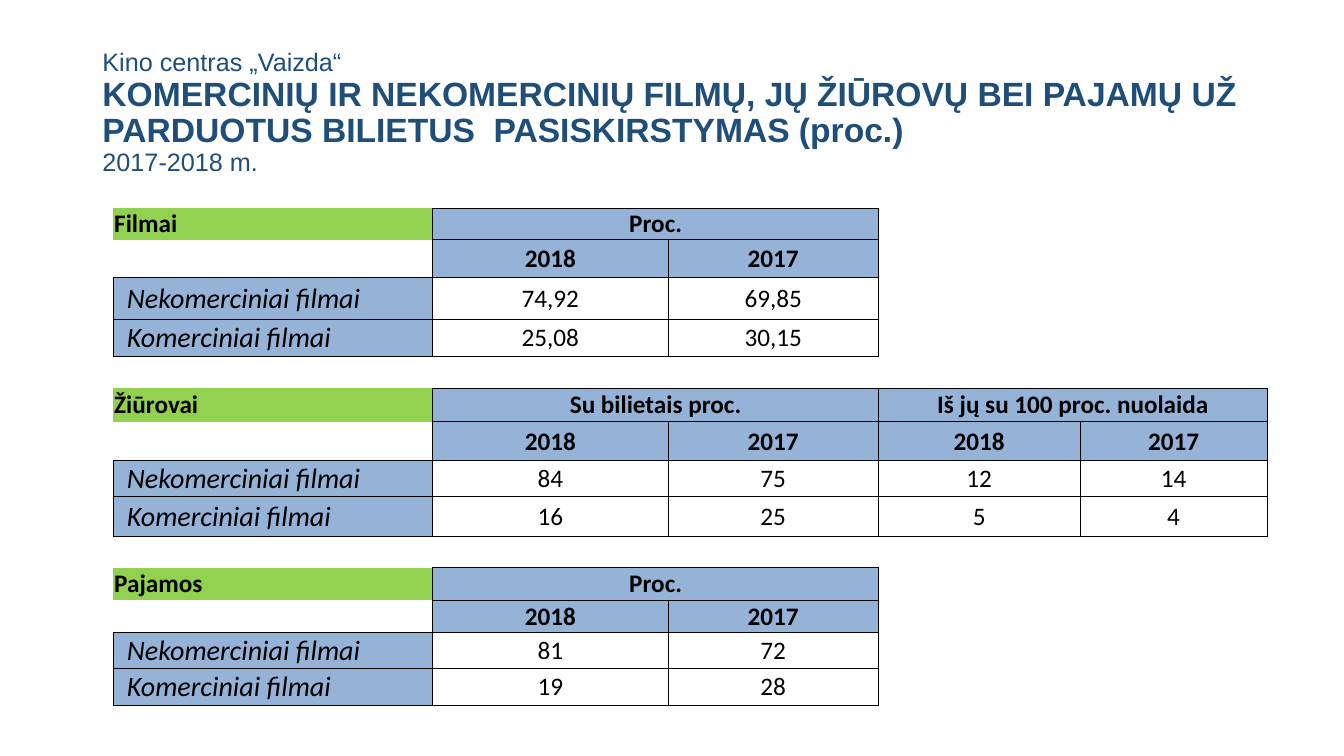
from lxml.etree import SubElement
from pptx import Presentation
from pptx.dml.color import RGBColor as RGB
from pptx.enum.text import MSO_ANCHOR as Anchor, PP_ALIGN as Align
from pptx.oxml.ns import qn
from pptx.util import Pt

HUES = {"title": "1F4E79", "text": "000000", "line": "000000",
        "group": "92D050", "head": "95B3D7"}
WIDTHS = [228.2, 168, 150.5, 97.7, 46.1, 133.9]
HEIGHTS = [22.3, 26.8, 29.8, 26.6, 22.7, 24.1, 28, 24.6, 28.6, 22.4,
           23, 23.3, 25.9, 25.9]
SPANS = [(1, 2), (3, 5)]
SLOTS = [1, 2, 3, 5]
YEARS = ["2018", "2017"]
KINDS = ["Nekomerciniai filmai", "Komerciniai filmai"]
GROUPS = [
    ("Filmai", ["Proc."], [["74,92", "69,85"], ["25,08", "30,15"]]),
    ("Žiūrovai", ["Su bilietais proc.", "Iš jų su 100 proc. nuolaida"],
     [["84", "75", "12", "14"], ["16", "25", "5", "4"]]),
    ("Pajamos", ["Proc."], [["81", "72"], ["19", "28"]]),
]
STEP = 5  # table rows from one group to the next
PLAIN = "{2D5ABB26-0587-4C30-8999-92F81FD0307C}"  # no style, no grid


class Deck:
    def __init__(self):
        self.show = Presentation()
        self.show.slide_width, self.show.slide_height = Pt(960), Pt(540)
        self.slide = self.show.slides.add_slide(self.show.slide_layouts[5])

    def run(self, para, text, size, face, hue, bold=False, slant=False):
        run = para.add_run()
        run.text = text
        font = run.font
        font.size, font.name = Pt(size), face
        font.bold, font.italic = bold, slant
        font.color.rgb = RGB.from_string(HUES[hue])

    def title(self, box, lines):
        shape = self.slide.shapes.title
        shape.left, shape.top, shape.width, shape.height = map(Pt, box)
        frame = shape.text_frame
        frame.word_wrap = True
        frame.vertical_anchor = Anchor.MIDDLE
        para = frame.paragraphs[0]
        para.alignment, para.line_spacing = Align.LEFT, 0.9
        for i, (text, size, bold) in enumerate(lines):
            if i:
                para.add_line_break()
            self.run(para, text, size, "Arial", "title", bold)

    def table(self, left, top, widths, heights):
        frame = self.slide.shapes.add_table(
            len(heights), len(widths), Pt(left), Pt(top),
            Pt(sum(widths)), Pt(sum(heights)))
        grid = frame.table
        grid.first_row = grid.horz_banding = False
        grid._tbl.tblPr.find(qn("a:tableStyleId")).text = PLAIN
        for col, width in zip(grid.columns, widths):
            col.width = Pt(width)
        for row, height in zip(grid.rows, heights):
            row.height = Pt(height)
        for cell in grid.iter_cells():
            cell.margin_left = cell.margin_right = cell.margin_top = Pt(0.7)
            cell.margin_bottom = 0
            cell.vertical_anchor = Anchor.MIDDLE
            cell.fill.background()
        return grid

    def edge(self, cell):
        props = cell._tc.get_or_add_tcPr()
        for i, side in enumerate("LRTB"):
            line = SubElement(props, qn("a:ln" + side), w=str(Pt(0.5)))
            fill = SubElement(line, qn("a:solidFill"))
            SubElement(fill, qn("a:srgbClr"), val=HUES["line"])
            props.insert(i, line)

    def cell(self, cell, text, fill=None, size=18, bold=False, slant=False,
             align=Align.CENTER, indent=0.7):
        cell.margin_left = Pt(indent)
        if fill:
            cell.fill.solid()
            cell.fill.fore_color.rgb = RGB.from_string(HUES[fill])
        para = cell.text_frame.paragraphs[0]
        para.alignment = align
        self.run(para, text, size, "Calibri", "text", bold, slant)

    def group(self, grid, top, name, heads, rows):
        """Fill one block of four rows, starting at table row top."""
        self.cell(grid.cell(top, 0), name, "group", bold=True, align=Align.LEFT)
        for head, (first, last) in zip(heads, SPANS):
            for col in range(first, last + 1):
                for row in range(top, top + 4):
                    self.edge(grid.cell(row, col))
            self.cell(grid.cell(top, first), head, "head", bold=True)
            grid.cell(top, first).merge(grid.cell(top, last))
        for col, year in zip(SLOTS, YEARS * len(heads)):
            self.cell(grid.cell(top + 1, col), year, "head", bold=True)
        for row, (kind, values) in enumerate(zip(KINDS, rows), top + 2):
            self.edge(grid.cell(row, 0))
            self.cell(grid.cell(row, 0), kind, "head", 20, slant=True,
                      align=Align.LEFT, indent=9.8)
            for col, value in zip(SLOTS, values):
                self.cell(grid.cell(row, col), value)


def main():
    deck = Deck()
    deck.title((66, 28.8, 828, 104.4), [
        ("Kino centras „Vaizda“", 18, False),
        ("KOMERCINIŲ IR NEKOMERCINIŲ FILMŲ, JŲ ŽIŪROVŲ BEI PAJAMŲ UŽ "
         "PARDUOTUS BILIETUS  PASISKIRSTYMAS (proc.)", 24, True),
        ("2017-2018 m.", 18, False)])
    grid = deck.table(80.9, 148.5, WIDTHS, HEIGHTS)
    for i, (name, heads, rows) in enumerate(GROUPS):
        deck.group(grid, i * STEP, name, heads, rows)
    for row in range(len(HEIGHTS)):
        if row != STEP:
            col = 4 if row < STEP else 3
            grid.cell(row, col).merge(grid.cell(row, col + 1))
    deck.show.save("out.pptx")


if __name__ == "__main__":
    main()
